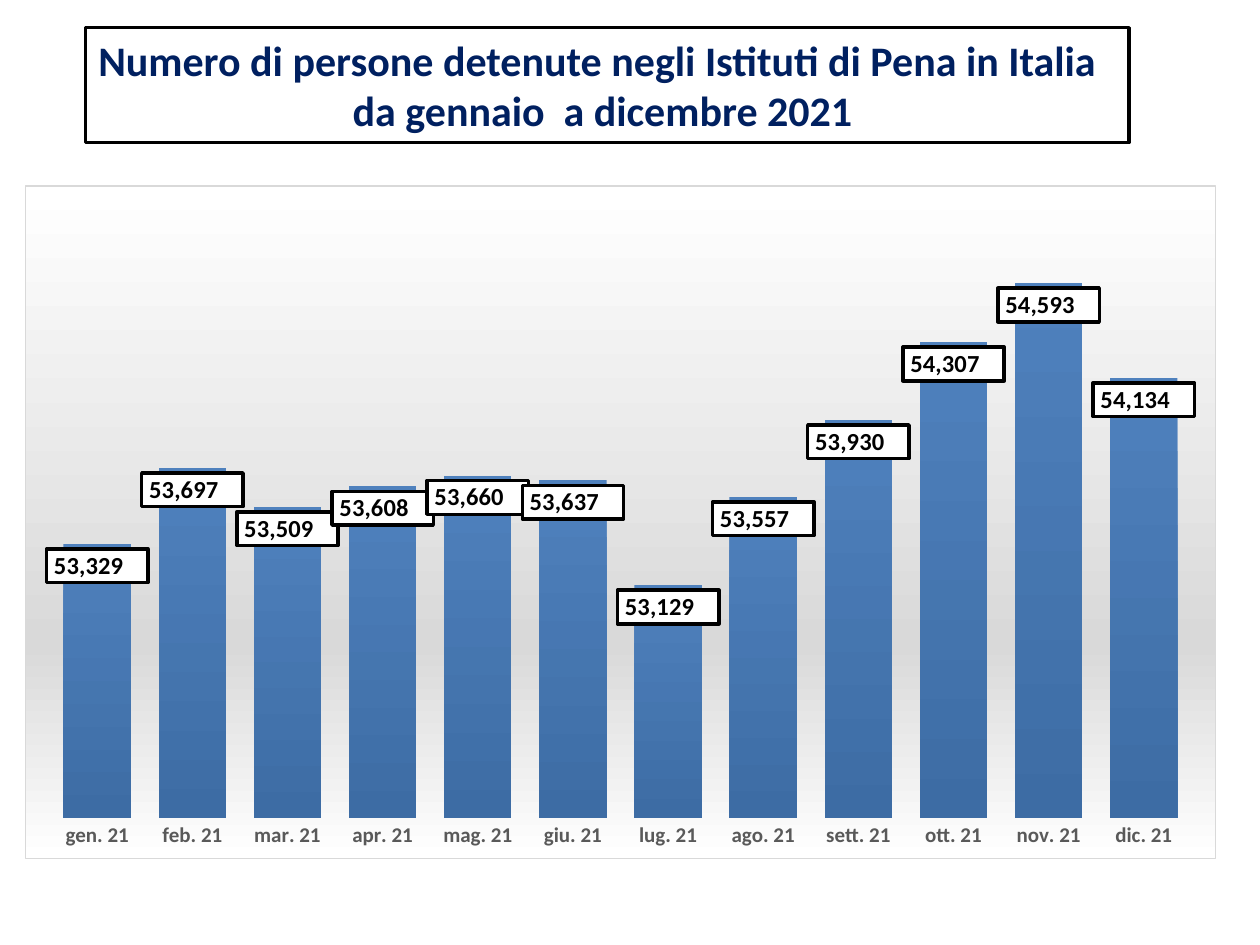
from pptx import Presentation
from pptx.chart.data import CategoryChartData
from pptx.dml.color import RGBColor
from pptx.enum.chart import XL_CHART_TYPE, XL_LABEL_POSITION, XL_TICK_MARK
from pptx.enum.text import MSO_ANCHOR, MSO_AUTO_SIZE, PP_ALIGN
from pptx.oxml import parse_xml
from pptx.oxml.ns import nsdecls, qn
from pptx.util import Inches, Pt

NAVY = RGBColor(0x00, 0x20, 0x60)
BLACK = RGBColor(0x00, 0x00, 0x00)
WHITE = RGBColor(0xFF, 0xFF, 0xFF)
GRAY = RGBColor(0x59, 0x59, 0x59)
SILVER = RGBColor(0xD9, 0xD9, 0xD9)
BLUE = RGBColor(0x4F, 0x81, 0xBD)
DEEP = RGBColor(0x3D, 0x6C, 0xA4)
FACE = "Calibri"
FORMAT = '_-* #,##0\\ _€_-;\\-* #,##0\\ _€_-;_-* "-"?'

MONTHS = ["gen.", "feb.", "mar.", "apr.", "mag.", "giu.",
          "lug.", "ago.", "sett.", "ott.", "nov.", "dic."]
COUNTS = [53329, 53697, 53509, 53608, 53660, 53637,
          53129, 53557, 53930, 54307, 54593, 54134]


def write(para, text, size=24, color=NAVY, bold=True, align=PP_ALIGN.LEFT):
    para.alignment = align
    run = para.add_run()
    run.text = text
    font = run.font
    font.name, font.size, font.bold = FACE, Pt(size), bold
    font.color.rgb = color


def shade(stops, line):
    marks = "".join(f'<a:gs pos="{spot * 1000}"><a:srgbClr val="{color}"/></a:gs>'
                    for spot, color in stops)
    return parse_xml(f'<c:spPr {nsdecls("c", "a")}><a:gradFill><a:gsLst>{marks}</a:gsLst>'
                     f'<a:lin ang="5400000" scaled="0"/></a:gradFill>{line}</c:spPr>')


deck = Presentation()
deck.slide_width, deck.slide_height = Inches(10), Inches(7.5)
slide = deck.slides.add_slide(deck.slide_layouts[5])

title = slide.shapes.title
title.left, title.top = Inches(0.68), Inches(0.22)
title.width, title.height = Inches(8.28), Inches(0.91)
title.fill.solid()
title.fill.fore_color.rgb = WHITE
title.line.color.rgb = BLACK
title.line.width = Pt(2)
frame = title.text_frame
frame.word_wrap = False
frame.auto_size = MSO_AUTO_SIZE.SHAPE_TO_FIT_TEXT
frame.vertical_anchor = MSO_ANCHOR.TOP
write(frame.paragraphs[0], "Numero di persone detenute negli Istituti di Pena in Italia")
write(frame.add_paragraph(), "da gennaio  a dicembre 2021 ", align=PP_ALIGN.CENTER)

data = CategoryChartData(number_format=FORMAT)
data.categories = [f"{month} 21" for month in MONTHS]
data.add_series("Series 1", COUNTS)
chart = slide.shapes.add_chart(XL_CHART_TYPE.COLUMN_CLUSTERED, Inches(0.2), Inches(1.47),
                               Inches(9.45), Inches(5.35), data).chart
chart.has_title = False
chart.has_legend = False
chart.font.name, chart.font.size = FACE, Pt(10)
chart.font.color.rgb = BLACK

months = chart.category_axis
months.major_tick_mark = XL_TICK_MARK.NONE
months.format.line.fill.background()
font = months.tick_labels.font
font.name, font.size, font.bold = FACE, Pt(12), True
font.color.rgb = GRAY

scale = chart.value_axis
scale.minimum_scale, scale.maximum_scale = 52000, 55000
scale.has_major_gridlines = False
scale.tick_labels.number_format = FORMAT
scale.tick_labels.number_format_is_linked = False
scale.visible = False

plot = chart.plots[0]
plot.gap_width = 41
plot.vary_by_categories = False
bars = plot.series[0]
bars.invert_if_negative = False
bars._element.find(qn("c:tx")).addnext(shade([(0, BLUE), (100, DEEP)], ""))

labels = bars.data_labels
labels.show_value = True
labels.position = XL_LABEL_POSITION.INSIDE_END
labels.number_format = FORMAT
labels.number_format_is_linked = False
font = labels.font
font.name, font.size, font.bold = FACE, Pt(14), True
font.color.rgb = BLACK
frame = parse_xml(f'<c:spPr {nsdecls("c", "a")}>'
                  f'<a:solidFill><a:srgbClr val="{WHITE}"/></a:solidFill>'
                  f'<a:ln w="{Pt(2)}"><a:solidFill><a:srgbClr val="{BLACK}"/></a:solidFill></a:ln>'
                  '</c:spPr>')
labels._element.find(qn("c:numFmt")).addnext(frame)

space = chart._chartSpace
edge = f'<a:ln w="{Pt(0.75)}"><a:solidFill><a:srgbClr val="{SILVER}"/></a:solidFill></a:ln>'
space.find(qn("c:chart")).addnext(shade([(0, WHITE), (68, SILVER), (100, WHITE)], edge))

area = space.find(f'{qn("c:chart")}/{qn("c:plotArea")}')
for old in area.findall(qn("c:layout")):
    area.remove(old)
sides = "".join(f'<c:{name} val="{value}"/>' for name, value in [
    ("layoutTarget", "inner"), ("xMode", "edge"), ("yMode", "edge"),
    ("x", 0.02), ("y", 0.02), ("w", 0.96), ("h", 0.92)])
area.insert(0, parse_xml(f'<c:layout {nsdecls("c")}><c:manualLayout>{sides}'
                         '</c:manualLayout></c:layout>'))

deck.save("out.pptx")
